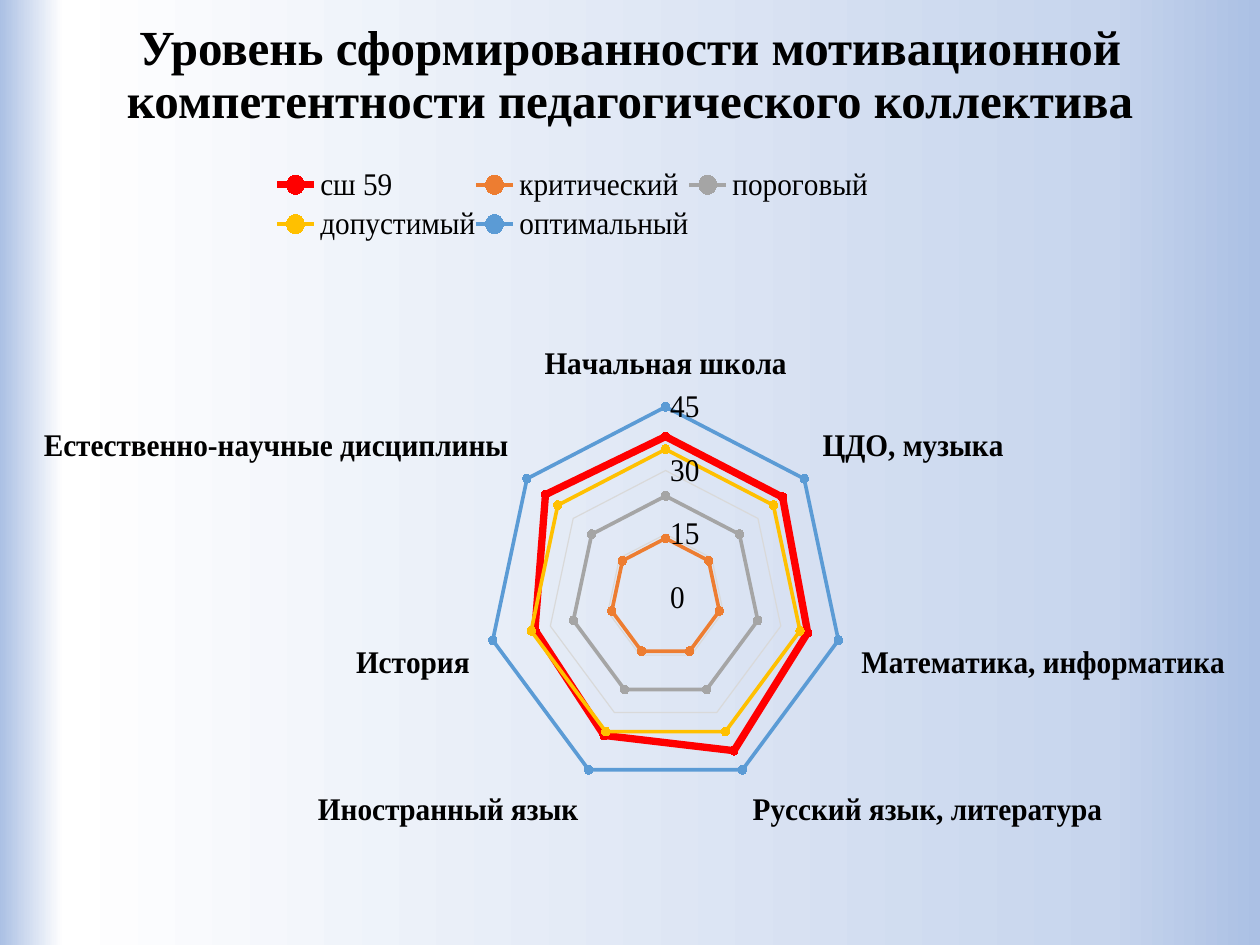
import copy

import lxml.etree
import pptx
import pptx.chart.data
import pptx.dml.color
import pptx.enum.chart
import pptx.enum.text
import pptx.oxml.ns
import pptx.util

Pt = pptx.util.Pt
RGBColor = pptx.dml.color.RGBColor
qn = pptx.oxml.ns.qn

BLACK = RGBColor(0x00, 0x00, 0x00)
WHITE = RGBColor(0xFF, 0xFF, 0xFF)
EDGE_BLUE = RGBColor(0xAB, 0xC0, 0xE4)
PALE_BLUE = RGBColor(0xC7, 0xD5, 0xED)
GRID_GRAY = RGBColor(0xD9, 0xD9, 0xD9)
RED = RGBColor(0xFF, 0x00, 0x00)
ORANGE = RGBColor(0xED, 0x7D, 0x31)
GRAY = RGBColor(0xA5, 0xA5, 0xA5)
YELLOW = RGBColor(0xFF, 0xC0, 0x00)
BLUE = RGBColor(0x5B, 0x9B, 0xD5)

DEPARTMENTS = [
    "Начальная школа", "ЦДО, музыка", "Математика, информатика",
    "Русский язык, литература", "Иностранный язык", "История",
    "Естественно-научные дисциплины",
]
# name, values, colour, line width
SCHOOL = ("сш 59", [38, 38, 37, 40, 36, 34, 39], RED, 4.5)
LEVELS = [("критический", 14, ORANGE), ("пороговый", 24, GRAY),
          ("допустимый", 35, YELLOW), ("оптимальный", 45, BLUE)]
RINGS = [SCHOOL] + [(name, [score] * len(DEPARTMENTS), color, 2.25)
                    for name, score, color in LEVELS]


class SlideBuilder:
    font_name = "Times New Roman"
    title_size = 28
    chart_size = 18

    def __init__(self, slide):
        self.slide = slide

    def style_font(self, font, size, bold=False):
        font.name = self.font_name
        font.size = Pt(size)
        font.bold = bold
        font.color.rgb = BLACK

    def background(self, stops, angle):
        fill = self.slide.background.fill
        fill.gradient()
        fill.gradient_angle = angle
        first = fill.gradient_stops[0]._gs
        stop_list = first.getparent()
        while len(fill.gradient_stops) < len(stops):
            stop_list.append(copy.deepcopy(first))
        for stop, (position, color) in zip(fill.gradient_stops, stops):
            stop.position = position
            stop.color.rgb = color

    def title(self, text, left, top, width, height):
        heading = self.slide.shapes.title
        heading.left, heading.top = Pt(left), Pt(top)
        heading.width, heading.height = Pt(width), Pt(height)
        frame = heading.text_frame
        frame.text = text
        frame.word_wrap = True
        frame.auto_size = pptx.enum.text.MSO_AUTO_SIZE.NONE
        frame.vertical_anchor = pptx.enum.text.MSO_ANCHOR.MIDDLE
        line = frame.paragraphs[0]
        line.alignment = pptx.enum.text.PP_ALIGN.CENTER
        line.line_spacing = 0.9
        self.style_font(line.runs[0].font, self.title_size, bold=True)

    def place(self, part, index, target, x, y, w, h):
        """Fix a chart part at fractions of the chart area."""
        layout = part.find(qn("c:layout"))
        if layout is None:
            layout = lxml.etree.Element(qn("c:layout"))
            part.insert(index, layout)
        manual = lxml.etree.SubElement(layout, qn("c:manualLayout"))
        settings = [("layoutTarget", target), ("xMode", "edge"), ("yMode", "edge"),
                    ("x", x), ("y", y), ("w", w), ("h", h)]
        for tag, setting in settings:
            if setting is not None:
                lxml.etree.SubElement(manual, qn("c:" + tag)).set("val", str(setting))

    def radar(self, categories, rings, left, top, width, height):
        scores = pptx.chart.data.CategoryChartData()
        scores.categories = categories
        for name, values, _, _ in rings:
            scores.add_series(name, values)
        radar = self.slide.shapes.add_chart(
            pptx.enum.chart.XL_CHART_TYPE.RADAR_MARKERS,
            Pt(left), Pt(top), Pt(width), Pt(height), scores).chart
        radar.has_title = False
        self.style_font(radar.font, self.chart_size)
        radar.plots[0].vary_by_categories = False

        # Rings
        for series, (_, _, color, line_width) in zip(radar.plots[0].series, rings):
            series.smooth = False
            series.format.line.color.rgb = color
            series.format.line.width = Pt(line_width)
            marker = series.marker
            marker.style = pptx.enum.chart.XL_MARKER_STYLE.CIRCLE
            marker.size = 5
            marker.format.fill.solid()
            marker.format.fill.fore_color.rgb = color
            marker.format.line.color.rgb = color

        # Axes
        departments, scale = radar.category_axis, radar.value_axis
        for axis in (departments, scale):
            axis.major_tick_mark = pptx.enum.chart.XL_TICK_MARK.NONE
            axis.minor_tick_mark = pptx.enum.chart.XL_TICK_MARK.NONE
            self.style_font(axis.tick_labels.font, self.chart_size,
                            bold=axis is departments)
        departments.has_major_gridlines = False
        scale.minimum_scale, scale.maximum_scale, scale.major_unit = 0, 45, 15
        scale.has_major_gridlines = True
        scale.format.line.fill.background()
        for line in (departments.format.line, scale.major_gridlines.format.line):
            line.color.rgb = GRID_GRAY
            line.width = Pt(0.75)

        # Legend and plot positions
        radar.has_legend = True
        radar.legend.position = pptx.enum.chart.XL_LEGEND_POSITION.TOP
        radar.legend.include_in_layout = False
        self.style_font(radar.legend.font, self.chart_size)
        self.place(radar.legend._element, 1, None, 0.18, 0.01, 0.54, 0.11)
        plot_area = radar._chartSpace.chart.plotArea
        self.place(plot_area, 0, "inner", 0.37, 0.33, 0.33, 0.5)


def main():
    deck = pptx.Presentation()
    deck.slide_width, deck.slide_height = Pt(720), Pt(540)
    builder = SlideBuilder(deck.slides.add_slide(deck.slide_layouts[5]))

    # Background
    builder.background([(0, EDGE_BLUE), (0.12, PALE_BLUE),
                        (0.95, WHITE), (1, EDGE_BLUE)], 180)
    # Heading
    builder.title("Уровень сформированности мотивационной "
                  "компетентности педагогического коллектива",
                  49.5, 9.5, 621, 67.5)
    # Competence by department
    builder.radar(DEPARTMENTS, RINGS, 25, 88.5, 675, 436.5)

    deck.save("out.pptx")


if __name__ == "__main__":
    main()
